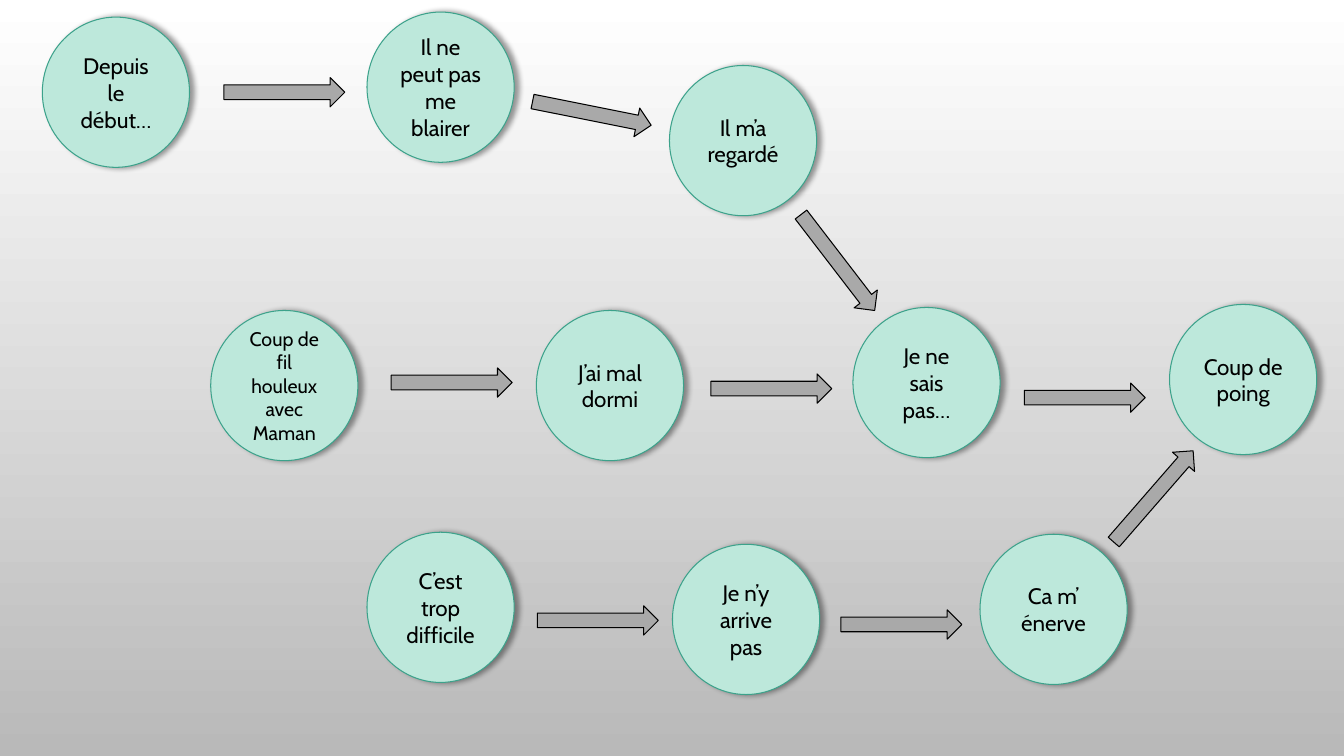
from lxml.etree import SubElement
from pptx import Presentation
from pptx.dml.color import RGBColor
from pptx.enum.shapes import MSO_SHAPE
from pptx.enum.text import MSO_ANCHOR, PP_ALIGN
from pptx.oxml.ns import qn
from pptx.util import Pt

EMU_PER_PX = 9144  # 100 px to the inch
COLOURS = {
    "top": "FFFFFF",
    "bottom": "B9B9B9",
    "mint": "BDE8DB",
    "green": "3CA28B",
    "grey": "A9A9A9",
    "black": "000000",
}
FONT = "Cabin"
CIRCLE_SIZE = (146, 149)
ARROW_SIZE = (120, 29)

# left, top, text, font size
CAUSES = [
    (42, 17, "Depuis le début…", 16),
    (364, 12, "Il ne peut pas me blairer", 16),
    (664, 65, "Il m’a regardé", 16),
    (209, 308, "Coup de fil houleux avec Maman", 14),
    (532, 308, "J’ai mal dormi", 16),
    (846, 305, "Je ne sais pas…", 16),
    (1160, 302, "Coup de poing", 16),
    (364, 528, "C’est trop difficile", 16),
    (667, 540, "Je n’y arrive pas", 16),
    (972, 530, "Ca m’ énerve", 16),
]
# left, top, rotation
ARROWS = [
    (222, 77, 0),
    (527, 98, 11.3),
    (771, 246, 52.5),
    (388, 365, 0),
    (705, 371, 0),
    (1016, 380, 0),
    (533, 601, 0),
    (834, 605, 0),
    (1084, 478, 311),
]


def px(length):
    return length * EMU_PER_PX


def colour(name):
    return RGBColor.from_string(COLOURS[name])


class CauseDiagram:
    def __init__(self, deck):
        self.slide = deck.slides.add_slide(deck.slide_layouts[6])

    def background(self, top, bottom):
        fill = self.slide.background.fill
        fill.gradient()
        fill.gradient_angle = 270
        for stop, name in zip(fill.gradient_stops, (top, bottom)):
            stop.color.rgb = colour(name)

    def shape(self, kind, left, top, size, fill, line):
        shape = self.slide.shapes.add_shape(kind, *map(px, (left, top, *size)))
        shape.shadow.inherit = False
        shape.fill.solid()
        shape.fill.fore_color.rgb = colour(fill)
        shape.line.color.rgb = colour(line)
        shape.line.width = Pt(0.75)
        return shape

    def circle(self, left, top, text, size):
        circle = self.shape(MSO_SHAPE.OVAL, left, top, CIRCLE_SIZE, "mint", "green")
        self.drop_shadow(circle)
        frame = circle.text_frame
        frame.text = text
        frame.word_wrap = True
        frame.vertical_anchor = MSO_ANCHOR.MIDDLE
        para = frame.paragraphs[0]
        para.alignment = PP_ALIGN.CENTER
        font = para.runs[0].font
        font.name = FONT
        font.size = Pt(size)
        font.color.rgb = colour("black")

    def arrow(self, left, top, rotation):
        arrow = self.shape(MSO_SHAPE.RIGHT_ARROW, left, top, ARROW_SIZE, "grey", "black")
        arrow.rotation = rotation

    def drop_shadow(self, shape):
        effects = shape._element.spPr.find(qn("a:effectLst"))
        shadow = SubElement(effects, qn("a:outerShdw"), blurRad=str(Pt(4)),
                            dist=str(Pt(3)), dir="0", algn="l", rotWithShape="0")
        tint = SubElement(shadow, qn("a:srgbClr"), val=COLOURS["black"])
        SubElement(tint, qn("a:alpha"), val="40000")


def main():
    deck = Presentation()
    deck.slide_width, deck.slide_height = px(1333), px(750)
    diagram = CauseDiagram(deck)
    diagram.background("top", "bottom")
    for cause in CAUSES:
        diagram.circle(*cause)
    for arrow in ARROWS:
        diagram.arrow(*arrow)
    deck.save("out.pptx")


if __name__ == "__main__":
    main()
